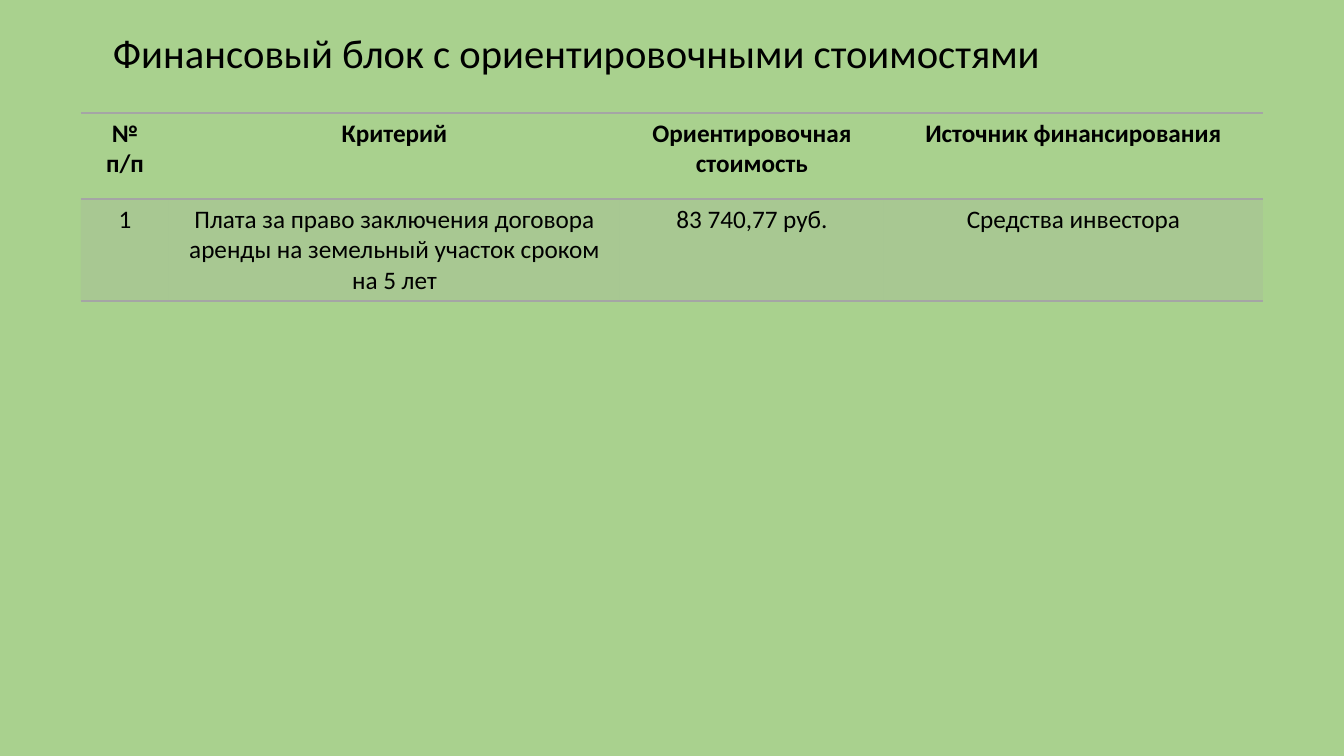
from lxml.etree import SubElement as Sub
from pptx import Presentation
from pptx.dml.color import RGBColor as Rgb
from pptx.enum.text import MSO_ANCHOR as Anchor, PP_ALIGN as Align
from pptx.oxml.ns import qn
from pptx.util import Pt

PX = 9144000 / 1008
FONT = "Calibri"
PLAIN = "{2D5ABB26-0587-4C30-8999-92F81FD0307C}"
HUES = {"back": "A9D18E", "text": "000000", "grey": "A5A5A5"}
TITLE = "Финансовый блок с ориентировочными стоимостями"
COLS = [88, 451, 264, 379]
ROWS = [86, 102]
COSTS = [
    ["№ п/п", "Критерий", "Ориентировочная стоимость", "Источник финансирования"],
    [
        "1",
        "Плата за право заключения договора аренды на земельный участок сроком на 5 лет",
        "83 740,77 руб.",
        "Средства инвестора",
    ],
]


def px(*nums):
    """Turn pixel lengths into EMU."""
    return [round(num * PX) for num in nums]


def hue(name):
    """Return a named colour."""
    return Rgb.from_string(HUES[name])


def add_run(para, text, size, bold=False):
    """Add one styled run to a paragraph."""
    run = para.add_run()
    run.text = text
    font = run.font
    font.name, font.size, font.bold = FONT, Pt(size), bold
    font.color.rgb = hue("text")


def add_title(slide, text, box):
    """Add the slide heading."""
    frame = slide.shapes.add_textbox(*px(*box)).text_frame
    frame.word_wrap = True
    frame.vertical_anchor = Anchor.MIDDLE
    para = frame.paragraphs[0]
    para.line_spacing = 0.9
    add_run(para, text, 29)


def add_rule(cell, side):
    """Draw a thin grey border on one side of a cell."""
    line = Sub(cell._tc.get_or_add_tcPr(), qn(f"a:{side}"), w=str(Pt(1)))
    fill = Sub(line, qn("a:solidFill"))
    Sub(fill, qn("a:srgbClr"), val=HUES["grey"])


def tint(cell, share):
    """Fill a cell with grey at a given percent of opacity."""
    cell.fill.solid()
    cell.fill.fore_color.rgb = hue("grey")
    tone = cell._tc.tcPr.find(f".//{qn('a:solidFill')}[last()]/{qn('a:srgbClr')}")
    tone = cell._tc.tcPr.find(qn("a:solidFill")).find(qn("a:srgbClr"))
    Sub(tone, qn("a:alpha"), val=str(share * 1000))


def fill_cell(cell, text, head):
    """Write and style one table cell."""
    para = cell.text_frame.paragraphs[0]
    para.alignment = Align.CENTER
    add_run(para, text, 18, head)
    for side in ("lnT", "lnB"):
        add_rule(cell, side)
    if head:
        cell.fill.background()
    else:
        tint(cell, 20)


def add_grid(slide, rows, left, top):
    """Add the cost table."""
    box = px(left, top, sum(COLS), sum(ROWS))
    grid = slide.shapes.add_table(len(ROWS), len(COLS), *box).table
    grid.horz_banding = False
    grid._tbl.tblPr.find(qn("a:tableStyleId")).text = PLAIN
    for col, width in zip(grid.columns, px(*COLS)):
        col.width = width
    for row, high in zip(grid.rows, px(*ROWS)):
        row.height = high
    for r, row in enumerate(rows):
        for c, text in enumerate(row):
            fill_cell(grid.cell(r, c), text, r == 0)


def main():
    """Build and save the slide."""
    deck = Presentation()
    deck.slide_width, deck.slide_height = px(1344, 756)
    slide = deck.slides.add_slide(deck.slide_layouts[6])
    back = slide.background.fill
    back.solid()
    back.fore_color.rgb = hue("back")
    add_title(slide, TITLE, (103, 13, 1159, 85))
    add_grid(slide, COSTS, 81, 113)
    deck.save("out.pptx")


if __name__ == "__main__":
    main()
